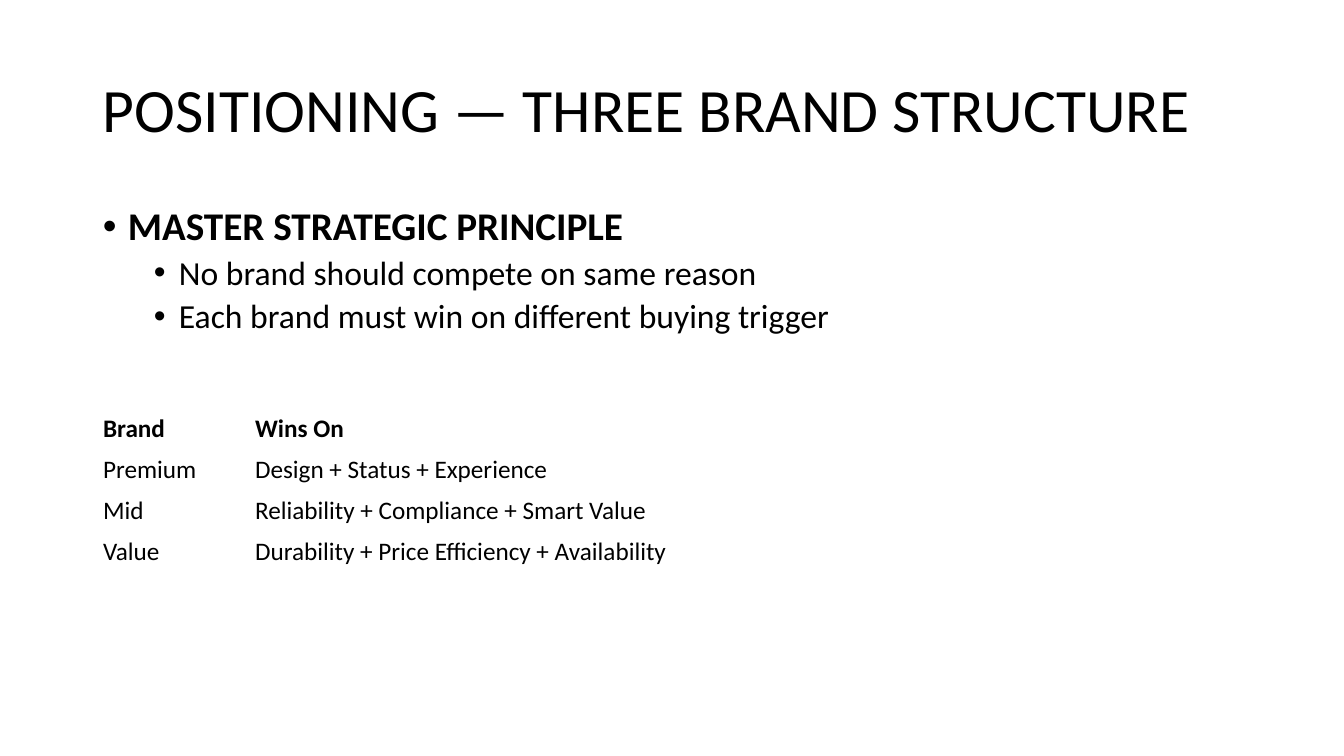
from lxml.etree import SubElement
from pptx import Presentation
from pptx.dml.color import RGBColor
from pptx.enum.text import MSO_ANCHOR
from pptx.oxml.ns import qn
from pptx.util import Emu, Pt

PX = 914400 / 100.8
LEFT, WIDTH = 93, 1159


def px(count):
    return Emu(round(count * PX))


def format_font(font, size, bold=False, color="000000"):
    font.name = "Calibri"
    font.size = Pt(size)
    font.bold = bold
    font.color.rgb = RGBColor.from_string(color)


presentation = Presentation()
presentation.slide_width, presentation.slide_height = px(1344), px(756)
slide = presentation.slides.add_slide(presentation.slide_layouts[6])

# Title
title = slide.shapes.add_textbox(px(LEFT), px(40), px(WIDTH), px(146))
title_frame = title.text_frame
title_frame.word_wrap = True
title_frame.vertical_anchor = MSO_ANCHOR.MIDDLE
title_frame.text = "POSITIONING — THREE BRAND STRUCTURE"
title_frame.paragraphs[0].line_spacing = 0.9
format_font(title_frame.paragraphs[0].runs[0].font, 44)

# Principle with its bullets: text, level, left indent, size
principles = [
    ("MASTER STRATEGIC PRINCIPLE", 0, 25, 28),
    ("No brand should compete on same reason", 1, 76, 24),
    ("Each brand must win on different buying trigger", 1, 76, 24),
]
body = slide.shapes.add_textbox(px(LEFT), px(202), px(WIDTH), px(480))
body_frame = body.text_frame
body_frame.word_wrap = True
body_frame.text = "\n".join(principle[0] for principle in principles)
for paragraph, (_, level, indent, size) in zip(body_frame.paragraphs, principles):
    paragraph.level = level
    paragraph.line_spacing = 0.9
    paragraph.space_before = Pt(5 * level)
    properties = paragraph._p.get_or_add_pPr()
    properties.set("marL", str(px(indent)))
    properties.set("indent", str(px(-25)))
    SubElement(properties, qn("a:buFont"), typeface="Arial")
    SubElement(properties, qn("a:buChar"), char="•")
    format_font(paragraph.runs[0].font, size, bold=level == 0)

# Brand table
brand_rows = [
    ("Brand", "Wins On"),
    ("Premium", "Design + Status + Experience"),
    ("Mid", "Reliability + Compliance + Smart Value"),
    ("Value", "Durability + Price Efficiency + Availability"),
]
column_widths = [152, 454]
row_height = 41
table = slide.shapes.add_table(
    len(brand_rows), len(column_widths), px(LEFT), px(408),
    px(sum(column_widths)), px(row_height * len(brand_rows))).table
table.first_row = False
table.horz_banding = False
for column, width in zip(table.columns, column_widths):
    column.width = px(width)
for row_index, texts in enumerate(brand_rows):
    for column_index, text in enumerate(texts):
        cell = table.cell(row_index, column_index)
        cell.fill.background()
        cell.vertical_anchor = MSO_ANCHOR.MIDDLE
        cell.text_frame.text = text
        format_font(cell.text_frame.paragraphs[0].runs[0].font, 18, bold=row_index == 0)

presentation.save("out.pptx")
